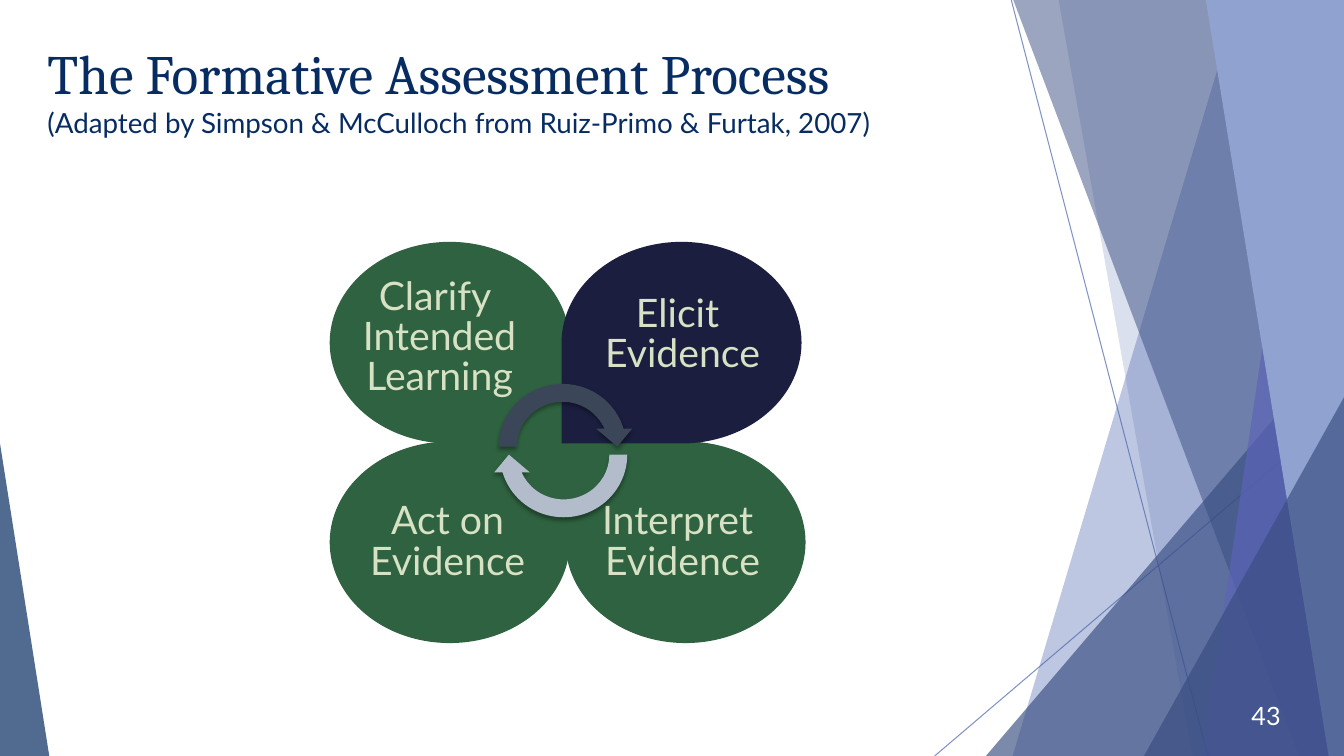
"""Build the slide on the formative assessment process."""
from dataclasses import dataclass

from lxml.etree import SubElement
from pptx import Presentation
from pptx.dml.color import RGBColor
from pptx.enum.shapes import MSO_CONNECTOR as LINE, MSO_SHAPE as SHAPE
from pptx.enum.text import MSO_ANCHOR as ANCHOR, MSO_AUTO_SIZE as FIT, PP_ALIGN as ALIGN
from pptx.oxml.ns import qn
from pptx.util import Pt

PX = 9144
WIDTH, HEIGHT, BLEED = 1333, 750, 751
COLORS = {
    "blue": "4A66AC", "steel": "384C81", "violet": "5C64B7", "sky": "90A2CF",
    "navy": "072C62", "green": "2E6240", "midnight": "1B1E3E", "cream": "D7E1C3",
    "slate": "3B4759", "silver": "B2BCCB", "white": "FFFFFF", "black": "000000",
}
Box = tuple[int, int, int, int]


@dataclass
class Band:
    top: int
    bottom: int
    color: str
    alpha: int = 100


@dataclass
class Wedge:
    box: Box
    apex: int
    color: str
    alpha: int


@dataclass
class Petal:
    box: Box
    flips: str
    color: str
    label_box: Box
    lines: tuple[str, ...]


@dataclass
class Arrow:
    box: Box
    rotation: int
    color: str


RAYS = [(1003, 0, 1198, HEIGHT), (WIDTH, 404, 927, HEIGHT)]
FACETS = [
    Band(1228, 1004, "blue", 36),
    Band(1050, 1183, "blue", 20),
    Wedge((977, 334, 356, 417), 1, "steel", 66),
    Band(1005, 1289, "steel", 50),
    Band(1303, 1192, "violet", 70),
    Band(1196, 1318, "sky"),
    Wedge((1134, 394, 199, 357), 1, "steel", 66),
    Wedge((0, 440, 49, 311), 0, "navy", 70),
]
PETALS = [
    Petal((327, 438, 238, 200), "", "green", (346, 507, 196, 74), ("Act on", "Evidence")),
    Petal((327, 240, 238, 200), "V", "green", (344, 284, 184, 118),
          ("Clarify ", "Intended", "Learning")),
    Petal((561, 438, 238, 200), "H", "green", (579, 507, 196, 74), ("Interpret ", "Evidence")),
    Petal((557, 240, 238, 200), "HV", "midnight", (579, 301, 196, 74), ("Elicit ", "Evidence")),
]
ARROWS = [Arrow((486, 372, 144, 142), 0, "slate"), Arrow((487, 380, 144, 142), 180, "silver")]


def emu(box: Box) -> list[int]:
    return [n * PX for n in box]


def rgb(color: str) -> RGBColor:
    return RGBColor.from_string(COLORS[color])


def set_alpha(parent, alpha: int) -> None:
    for clr in parent.iter(qn("a:srgbClr")):
        SubElement(clr, qn("a:alpha"), val=str(alpha * 1000))


def paint(sp, color: str, alpha: int = 100) -> None:
    sp.fill.solid()
    sp.fill.fore_color.rgb = rgb(color)
    sp.line.fill.background()
    sp.shadow.inherit = False
    if alpha < 100:
        set_alpha(sp.element.spPr, alpha)


def add_run(p, text: str, size: float, font: str, color: str) -> None:
    r = p.add_run()
    r.text = text
    r.font.size, r.font.name = Pt(size), font
    r.font.color.rgb = rgb(color)


def draw_ray(s, ray: Box) -> None:
    line = s.shapes.add_connector(LINE.STRAIGHT, *emu(ray))
    line.line.width = Pt(0.75)
    line.line.color.rgb = rgb("blue")
    set_alpha(line.line._ln, 70)
    SubElement(line._element.spPr, qn("a:effectLst"))


def draw_band(s, band: Band) -> None:
    builder = s.shapes.build_freeform(band.top, 0, scale=PX)
    builder.add_line_segments([(WIDTH, 0), (WIDTH, BLEED), (band.bottom, BLEED)])
    paint(builder.convert_to_shape(), band.color, band.alpha)


def draw_wedge(s, wedge: Wedge) -> None:
    sp = s.shapes.add_shape(SHAPE.ISOSCELES_TRIANGLE, *emu(wedge.box))
    sp.adjustments[0] = wedge.apex
    paint(sp, wedge.color, wedge.alpha)


def draw_petal(s, petal: Petal) -> None:
    sp = s.shapes.add_shape(SHAPE.TEAR, *emu(petal.box))
    for axis in petal.flips:
        sp.element.spPr.xfrm.set(f"flip{axis}", "1")
    paint(sp, petal.color)


def draw_label(s, petal: Petal) -> None:
    tf = s.shapes.add_textbox(*emu(petal.label_box)).text_frame
    tf.word_wrap = True
    tf.auto_size = FIT.SHAPE_TO_FIT_TEXT
    for i, line in enumerate(petal.lines):
        p = tf.add_paragraph() if i else tf.paragraphs[0]
        p.alignment = ALIGN.CENTER
        p.line_spacing, p.space_after = 0.5, Pt(12)
        add_run(p, line, 28, "Lato", "cream")


def draw_arrow(s, arrow: Arrow) -> None:
    sp = s.shapes.add_shape(SHAPE.CIRCULAR_ARROW, *emu(arrow.box))
    sp.rotation = arrow.rotation
    paint(sp, arrow.color)
    effects = sp.element.spPr.find(qn("a:effectLst"))
    shadow = SubElement(effects, qn("a:outerShdw"), blurRad=str(Pt(3)), dist=str(Pt(2)),
                        dir="5400000", rotWithShape="0")
    SubElement(shadow, qn("a:srgbClr"), val=COLORS["black"])
    set_alpha(shadow, 35)


def write_title(s) -> None:
    title = s.shapes.title
    title.left, title.top, title.width, title.height = emu((37, 34, 940, 144))
    title.element.getparent().append(title.element)
    tf = title.text_frame
    tf.auto_size, tf.vertical_anchor = FIT.NONE, ANCHOR.TOP
    p = tf.paragraphs[0]
    p.alignment = ALIGN.LEFT
    add_run(p, "The Formative Assessment Process", 39.6, "Cambria", "navy")
    p.add_line_break()
    SubElement(p._p[-1], qn("a:rPr"), sz="3960")
    add_run(p, "(Adapted by Simpson & McCulloch from Ruiz-Primo & Furtak, 2007)",
            19.8, "Lato", "navy")


def write_page_number(s) -> None:
    tf = s.shapes.add_textbox(*emu((1205, 690, 75, 40))).text_frame
    tf.word_wrap, tf.vertical_anchor = True, ANCHOR.MIDDLE
    p = tf.paragraphs[0]
    p.alignment = ALIGN.RIGHT
    add_run(p, "43", 18, "Lato", "white")


def main() -> None:
    prs = Presentation()
    prs.slide_width, prs.slide_height = WIDTH * PX, HEIGHT * PX
    s = prs.slides.add_slide(prs.slide_layouts[5])
    for ray in RAYS:
        draw_ray(s, ray)
    for facet in FACETS:
        if isinstance(facet, Band):
            draw_band(s, facet)
        else:
            draw_wedge(s, facet)
    write_title(s)
    for petal in PETALS:
        draw_petal(s, petal)
    for petal in PETALS:
        draw_label(s, petal)
    for arrow in ARROWS:
        draw_arrow(s, arrow)
    write_page_number(s)
    prs.save("out.pptx")


if __name__ == "__main__":
    main()
